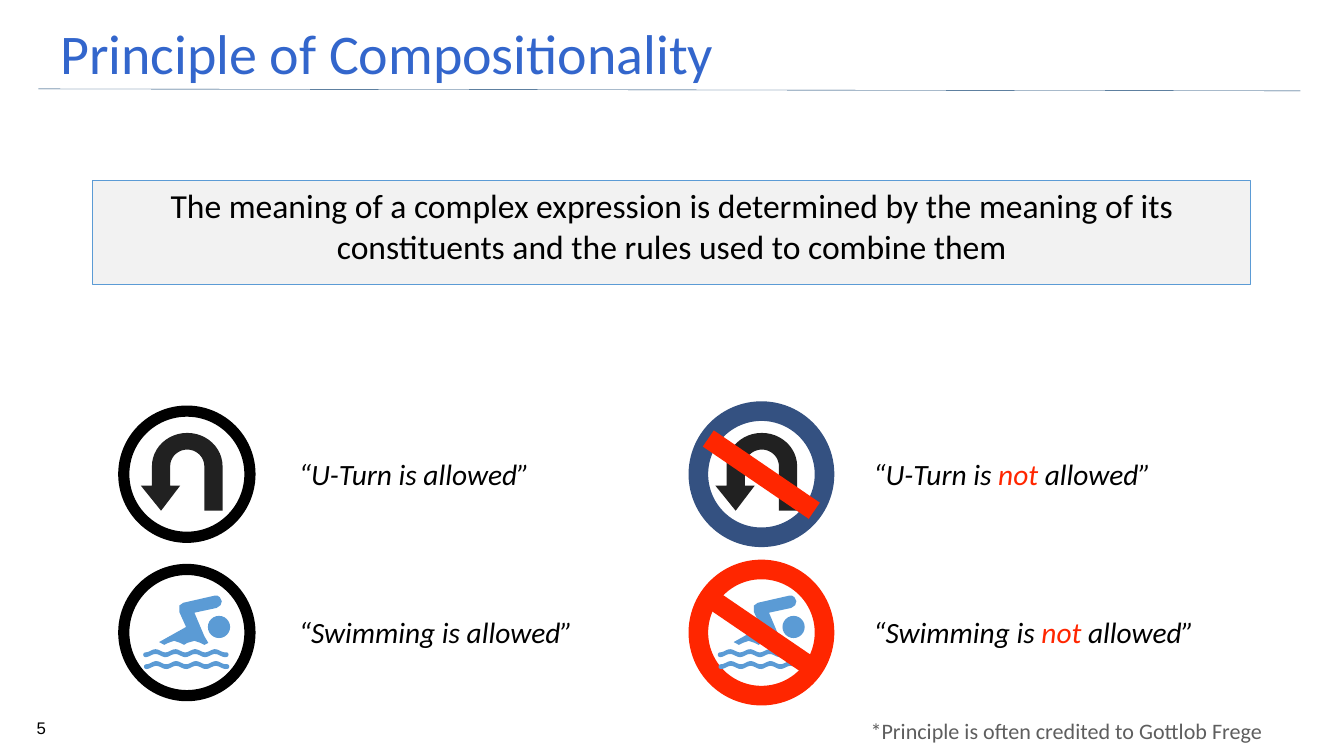
from math import cos, pi, sin, tau

from lxml.etree import SubElement
from pptx import Presentation
from pptx.dml.color import RGBColor
from pptx.enum.shapes import MSO_CONNECTOR, MSO_SHAPE
from pptx.enum.text import MSO_ANCHOR, PP_ALIGN
from pptx.oxml.ns import qn
from pptx.util import Cm, Pt

BLACK, RED, NAVY = "000000", "FF2600", "345181"
CHARCOAL, BLUE = "212121", "5B9BD5"
SIGN_SIZE = 3.18

# Outline of the swimmer's body, in cm from the top left of its sign
SWIMMER_BODY = [
    (2.29, 0.66), (1.5, 0.84), (1.4, 0.91), (1.4, 1.07), (1.57, 1.45),
    (0.89, 1.83), (1.02, 1.9), (1.12, 1.85), (1.27, 1.8), (1.42, 1.85),
    (1.52, 1.9), (1.6, 1.85), (1.78, 1.8), (1.93, 1.85), (2.03, 1.9),
    (2.13, 1.85), (2.03, 1.68), (1.78, 1.09), (2.34, 0.97), (2.44, 0.9),
    (2.47, 0.8), (2.42, 0.7), (2.36, 0.66),
]


def color(value):
    return RGBColor.from_string(value)


def arc(x, y, radius_x, radius_y, start, end, steps=24):
    """Points on an ellipse, with angles in radians clockwise from the right."""
    angles = [start + (end - start) * i / steps for i in range(steps + 1)]
    return [(x + radius_x * cos(a), y + radius_y * sin(a)) for a in angles]


def wave(left, middle, length=2.03, period=0.5, swing=0.04, half=0.06, steps=48):
    """A wavy band with round ends."""
    line = []
    for i in range(steps + 1):
        x = length * i / steps
        line.append((left + x, middle + swing * cos(tau * x / period)))
    top = [(x, y - half) for x, y in line]
    bottom = [(x, y + half) for x, y in reversed(line)]
    right_end = arc(*line[-1], half, half, -pi / 2, pi / 2, 8)
    left_end = arc(*line[0], half, half, pi / 2, 3 * pi / 2, 8)
    return top + right_end + bottom + left_end


def u_turn_outlines():
    outer = arc(1.6, 1.39, 0.89, 0.84, pi, tau)
    inner = arc(1.6, 1.39, 0.43, 0.42, 0, -pi)
    arrow = [(1.17, 1.88), (1.42, 1.88), (0.94, 2.51), (0.43, 1.88), (0.71, 1.88)]
    return [outer + [(2.49, 2.51), (2.03, 2.51)] + inner + arrow]


def swimmer_outlines():
    head = arc(2.4, 1.45, 0.28, 0.28, 0, tau)
    return [SWIMMER_BODY, head, wave(0.55, 2.11), wave(0.57, 2.41)]


def add_text(page, spans, left, top, width, height, size, inset=None,
             anchor=MSO_ANCHOR.MIDDLE, align=PP_ALIGN.LEFT, **font):
    box = page.shapes.add_textbox(Cm(left), Cm(top), Cm(width), Cm(height))
    frame = box.text_frame
    frame.word_wrap = True
    frame.vertical_anchor = anchor
    if inset is not None:
        for side in ("left", "top", "right", "bottom"):
            setattr(frame, f"margin_{side}", Cm(inset))
    para = frame.paragraphs[0]
    para.alignment = align
    style = {"name": "Calibri", "size": Pt(size), **font}
    for text, tint in spans:
        span = para.add_run()
        span.text = text
        for name, value in style.items():
            setattr(span.font, name, value)
        span.font.color.rgb = color(tint)
    return box


def add_line(page, start, end, tint, weight):
    line = page.shapes.add_connector(
        MSO_CONNECTOR.STRAIGHT, *(Cm(value) for value in (*start, *end)))
    line.line.color.rgb = color(tint)
    line.line.width = Pt(weight)
    SubElement(line._element.spPr, qn("a:effectLst"))


def add_ring(page, left, top, tint, weight):
    ring = page.shapes.add_shape(
        MSO_SHAPE.OVAL, Cm(left), Cm(top), Cm(SIGN_SIZE), Cm(SIGN_SIZE))
    ring.shadow.inherit = False
    ring.fill.background()
    ring.line.color.rgb = color(tint)
    ring.line.width = Pt(weight)


def add_pictogram(page, left, top, outlines, tint):
    builder = None
    for outline in outlines:
        points = [(Cm(left + x), Cm(top + y)) for x, y in outline]
        if builder is None:
            builder = page.shapes.build_freeform(*points[0])
        else:
            builder.move_to(*points[0])
        builder.add_line_segments(points[1:], close=True)
    pictogram = builder.convert_to_shape()
    pictogram.shadow.inherit = False
    pictogram.fill.solid()
    pictogram.fill.fore_color.rgb = color(tint)
    pictogram.line.fill.background()


def add_sign(page, left, top, activity, outlines, tint, ring_tint, forbidden):
    add_ring(page, left, top, ring_tint, 14 if forbidden else 8)
    add_pictogram(page, left, top, outlines, tint)
    spans = [(f"“{activity} is allowed”", BLACK)]
    if forbidden:
        add_line(page, (left + 0.25, top + 0.69), (left + 2.92, top + 2.51), RED, 14)
        spans = [(f"“{activity} is ", BLACK), ("not", RED), (" allowed”", BLACK)]
    add_text(page, spans, left + 4.33, top + 1.06, 8.8, 1.04, 21,
             inset=0.08, italic=True)


def main():
    deck = Presentation()
    deck.slide_width, deck.slide_height = Cm(33.87), Cm(19.05)
    page = deck.slides.add_slide(deck.slide_layouts[6])

    # Title, rule and page number
    add_line(page, (0.97, 2.24), (32.77, 2.29), "093D6E", 0.25)
    add_text(page, [("Principle of Compositionality", "3366CC")],
             1.27, 0.58, 27.46, 1.47, 40)
    add_text(page, [("5", BLACK)], 0.33, 18.08, 1.42, 0.64, 12,
             anchor=MSO_ANCHOR.BOTTOM, align=PP_ALIGN.CENTER, name="Arial")

    # Statement of the principle
    statement = add_text(
        page,
        [("The meaning of a complex expression is determined by the meaning of its "
          "constituents and the rules used to combine them", BLACK)],
        2.34, 4.54, 29.18, 2.62, 24, anchor=MSO_ANCHOR.TOP, align=PP_ALIGN.CENTER)
    statement.fill.solid()
    statement.fill.fore_color.rgb = color("F2F2F2")
    statement.line.color.rgb = color(BLUE)
    statement.line.width = Pt(0.75)

    # Signs: one row for each activity, allowed on the left, forbidden on the right
    activities = [
        ("U-Turn", u_turn_outlines(), CHARCOAL, NAVY),
        ("Swimming", swimmer_outlines(), BLUE, RED),
    ]
    for row, (activity, outlines, tint, forbidden_ring) in enumerate(activities):
        top = 10.36 + row * 3.99
        add_sign(page, 3.12, top, activity, outlines, tint, BLACK, False)
        add_sign(page, 17.6, top, activity, outlines, tint, forbidden_ring, True)

    # Credit
    add_text(page, [("*Principle is often credited to Gottlob Frege", "5E5E5E")],
             21.86, 17.92, 10.57, 0.97, 15.8, inset=0.08)

    deck.save("out.pptx")


if __name__ == "__main__":
    main()
